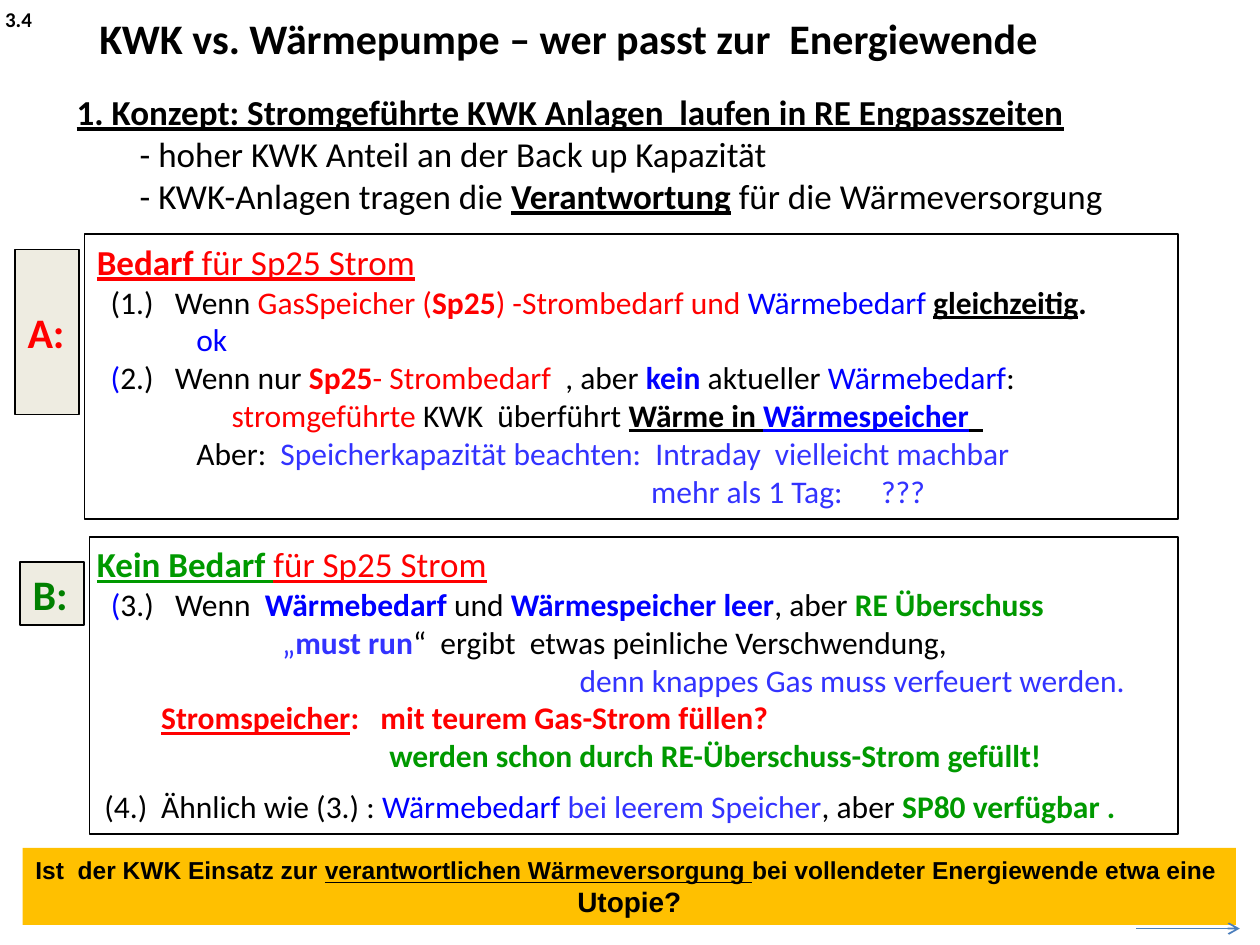
"""Builds the slide comparing combined heat and power with heat pumps."""
from lxml import etree
from pptx import Presentation
from pptx.dml.color import RGBColor
from pptx.enum.shapes import MSO_CONNECTOR, MSO_SHAPE
from pptx.enum.text import MSO_ANCHOR, PP_ALIGN
from pptx.oxml.ns import qn
from pptx.util import Inches, Pt

RECTANGLE = MSO_SHAPE.RECTANGLE
STRAIGHT = MSO_CONNECTOR.STRAIGHT
TOP, MIDDLE = MSO_ANCHOR.TOP, MSO_ANCHOR.MIDDLE
LEFT, CENTER = PP_ALIGN.LEFT, PP_ALIGN.CENTER

WIDTH, HEIGHT = Inches(10), Inches(7.5)
COLUMNS = 100
CELL = WIDTH // COLUMNS

THEME = {
    "body_font": "Calibri", "banner_font": "Arial",
    "title": 24, "heading": 20, "text": 18, "number": 12, "banner": 14, "closing": 16,
    "black": "000000", "red": "FF0000", "blue": "0000FF", "violet": "3333FF",
    "green": "009900", "dark_green": "008000", "sand": "EEECE1", "amber": "FFC000",
    "arrow": "4B7EBC", "line": 1,
}

NUMBERED = (1.1, 6.2)

TITLE = [("title", 0, 0, [("KWK vs. Wärmepumpe – wer passt zur  Energiewende", "black", "b")])]
NUMBER = [("number", 0, 0, [("3.4", "black", "b")])]
CONCEPT = [
    ("heading", 0, 0, [
        ("1. Konzept: Stromgeführte KWK Anlagen  laufen in RE Engpasszeiten", "black", "bu")]),
    ("heading", 5, 5, [("- hoher KWK Anteil an der Back up Kapazität", "black", "")]),
    ("heading", 5, 5, [
        ("- KWK-Anlagen tragen die ", "black", ""), ("Verantwortung", "black", "bu"),
        (" für die Wärmeversorgung", "black", "")]),
]
DEMAND = [
    ("heading", 0, 0, [("Bedarf ", "red", "bu"), ("für Sp25 Strom", "red", "u")]),
    ("text", *NUMBERED, [
        ("(1.)\tWenn ", "black", ""), ("GasSpeicher (", "red", ""), ("Sp25", "red", "b"),
        (") -Strombedarf und ", "red", ""), ("Wärmebedarf ", "blue", ""),
        ("gleichzeitig", "black", "bu"), (".", "black", "b")]),
    ("text", 7.9, 7.9, [("ok", "blue", "")]),
    ("text", *NUMBERED, [
        ("(", "blue", ""), ("2.)\tWenn nur ", "black", ""), ("Sp25", "red", "b"),
        ("- Strombedarf", "red", ""), ("  , aber ", "black", ""), ("kein", "blue", "b"),
        (" aktueller ", "black", ""), ("Wärmebedarf", "blue", ""), (":", "black", "")]),
    ("text", 10.7, 10.7, [
        ("stromgeführte", "red", ""), (" KWK  überführt ", "black", ""),
        ("Wärme in ", "black", "bu"), ("Wärmespeicher", "blue", "bu"), ("  ", "black", "bu")]),
    ("text", 7.9, 7.9, [
        ("Aber:  ", "black", ""),
        ("Speicherkapazität beachten:  Intraday  vielleicht machbar", "violet", "")]),
    ("text", 44, 44, [("mehr als 1 Tag: \u2003???", "violet", "")]),
]
NO_DEMAND = [
    ("heading", 0, 0, [("Kein Bedarf ", "green", "bu"), ("für Sp25 Strom", "red", "u")]),
    ("text", *NUMBERED, [
        ("(", "blue", ""), ("3.)\tWenn  ", "black", ""), ("Wärmebedarf", "blue", "b"),
        (" und ", "black", ""), ("Wärmespeicher leer", "blue", "b"),
        (", aber ", "black", ""), ("RE Überschuss", "green", "b")]),
    ("text", 14.7, 14.7, [
        ("„", "violet", ""), ("must run", "violet", "b"),
        ("“  ergibt  etwas peinliche Verschwendung,", "black", "")]),
    ("text", 38.3, 38.3, [("denn knappes Gas muss verfeuert werden.", "violet", "")]),
    ("text", 5.1, 22.5, [
        ("Stromspeicher", "red", "bu"), (":\tmit teurem Gas-Strom füllen?", "red", "b")]),
    ("text", 23.2, 23.2, [("werden schon durch RE-Überschuss-Strom gefüllt!", "green", "b")]),
    ("text", 0.6, 5.1, [
        ("(4.)\tÄhnlich wie (3.) : ", "black", ""), ("Wärmebedarf ", "blue", ""),
        ("bei leerem Speicher", "violet", ""), (", aber ", "black", ""),
        ("SP80 verfügbar .", "green", "b")]),
]
TAG_A = [("title", 0, 0, [("A:", "red", "b")])]
TAG_B = [("title", 0, 0, [("B:", "dark_green", "b")])]
BANNER = [
    ("banner", 0, 0, [
        ("Ist  der KWK Einsatz zur ", "black", "b"),
        ("verantwortlichen Wärmeversorgung ", "black", "bu"),
        ("bei vollendeter Energiewende etwa eine ", "black", "b")]),
    ("closing", 0, 0, [("Utopie?", "black", "b")]),
]

ARROW = (90.2, 73.7, 98.4, 73.7)
PANELS = [
    {"at": (5.1, 6.7, 92.9, 12.4), "rows": CONCEPT},
    {"at": (6.9, 0.5, 87, 5), "rows": TITLE},
    {"at": (0.4, 0.5, 3.5, 2), "rows": NUMBER, "pad": (0, 0)},
    {"at": (1.8, 67.3, 96.3, 6.1), "rows": BANNER, "fill": "amber",
     "font": "banner_font", "align": CENTER, "anchor": MIDDLE},
    {"at": (1.2, 19.8, 5.1, 13.1), "rows": TAG_A, "fill": "sand", "line": "black",
     "anchor": MIDDLE},
    {"at": (1.6, 44.6, 5.1, 5), "rows": TAG_B, "fill": "sand", "line": "black",
     "anchor": MIDDLE},
    {"at": (7.1, 42.6, 86.4, 23.6), "rows": NO_DEMAND, "line": "black", "pad": (0.6, 0.5),
     "last_gap": 7.3},
    {"at": (6.7, 18.6, 86.8, 22.6), "rows": DEMAND, "line": "black"},
]


def cells(count):
    return round(count * CELL)


def color(name):
    return RGBColor.from_string(THEME[name])


def write(frame, rows, font, align, last_gap):
    for index, (size, start, hang, runs) in enumerate(rows):
        para = frame.paragraphs[0] if index == 0 else frame.add_paragraph()
        para.alignment = align
        properties = para._p.get_or_add_pPr()
        properties.set("marL", str(cells(hang)))
        properties.set("indent", str(cells(start - hang)))
        for text, tint, marks in runs:
            span = para.add_run()
            span.text = text
            span.font.name = THEME[font]
            span.font.size = Pt(THEME[size])
            span.font.color.rgb = color(tint)
            span.font.bold = "b" in marks
            span.font.underline = "u" in marks
    if last_gap:
        para.space_before = Pt(last_gap)


def add_panel(page, at, rows, fill=None, line=None, font="body_font", align=LEFT,
              anchor=TOP, pad=(1, 0.5), last_gap=0):
    place = [cells(value) for value in at]
    if fill or line:
        box = page.shapes.add_shape(RECTANGLE, *place)
        box.shadow.inherit = False
    else:
        box = page.shapes.add_textbox(*place)
    if fill:
        box.fill.solid()
        box.fill.fore_color.rgb = color(fill)
    else:
        box.fill.background()
    if line:
        box.line.color.rgb = color(line)
        box.line.width = Pt(THEME["line"])
    else:
        box.line.fill.background()
    frame = box.text_frame
    frame.word_wrap = True
    frame.vertical_anchor = anchor
    frame.margin_left = frame.margin_right = cells(pad[0])
    frame.margin_top = frame.margin_bottom = cells(pad[1])
    write(frame, rows, font, align, last_gap)


def add_arrow(page, ends):
    arrow = page.shapes.add_connector(STRAIGHT, *[cells(value) for value in ends])
    arrow.line.color.rgb = color("arrow")
    arrow.line.width = Pt(THEME["line"])
    etree.SubElement(arrow.line._get_or_add_ln(), qn("a:tailEnd"), type="arrow")
    etree.SubElement(arrow._element.spPr, qn("a:effectLst"))


def main():
    deck = Presentation()
    deck.slide_width, deck.slide_height = WIDTH, HEIGHT
    page = deck.slides.add_slide(deck.slide_layouts[6])
    for panel in PANELS:
        add_panel(page, **panel)
    add_arrow(page, ARROW)
    deck.save("out.pptx")


if __name__ == "__main__":
    main()
